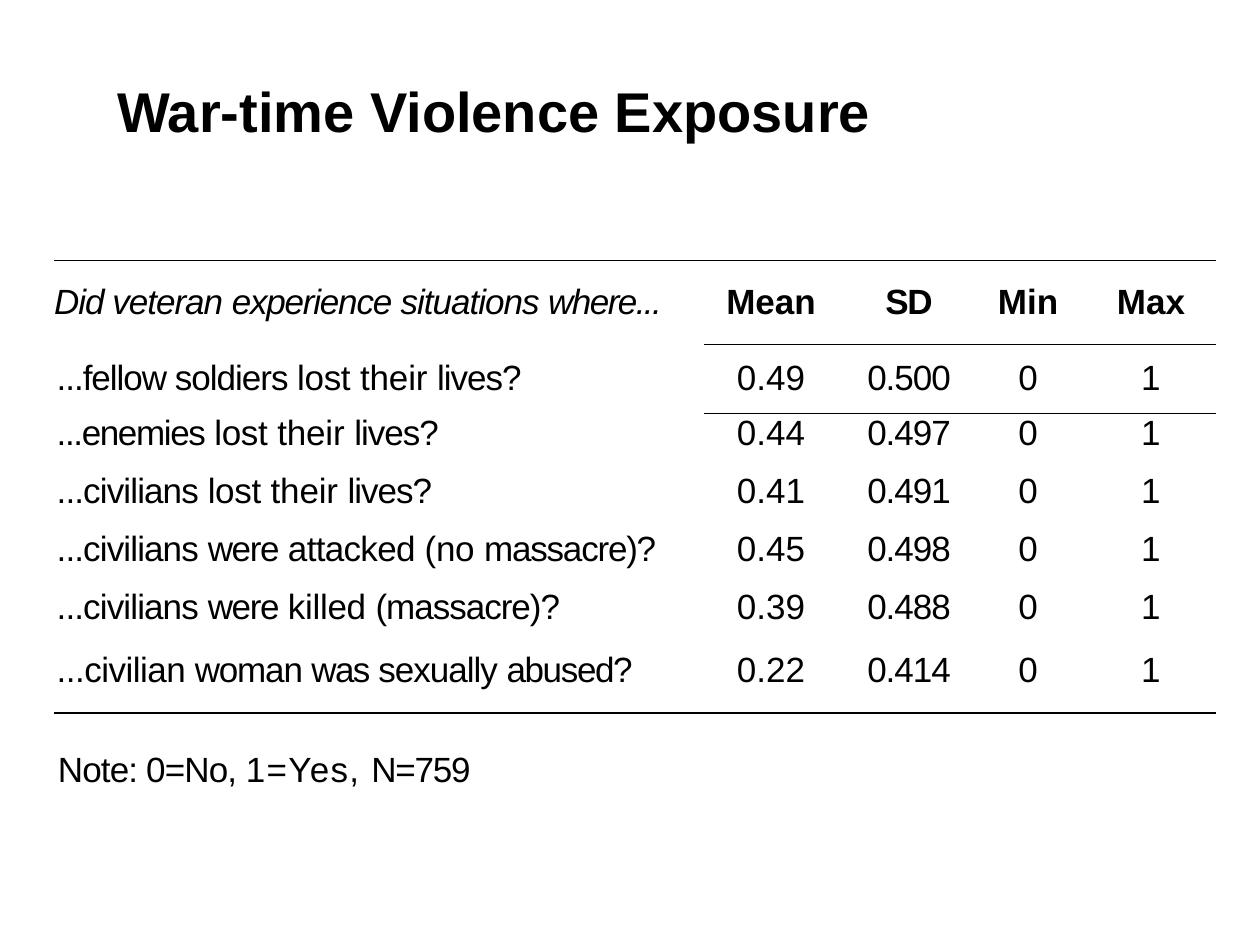
"""Build the slide with the table of war-time violence exposure."""
from lxml.etree import SubElement
from pptx import Presentation
from pptx.dml.color import RGBColor
from pptx.enum.text import MSO_ANCHOR as Anchor, PP_ALIGN as Align
from pptx.oxml import parse_xml
from pptx.oxml.ns import nsdecls, qn
from pptx.util import Inches, Pt

BLACK = RGBColor(0, 0, 0)
WHITE = RGBColor(255, 255, 255)
FONT = "Arial"
PLAIN = "{2D5ABB26-0587-4C30-8999-92F81FD0307C}"
TITLE = "War-time Violence Exposure"
HEAD = [("Did veteran ", -0.6), ("experience ", -0.7), ("situations ", -0.6), ("where...", -0.9)]
NAMES = ["Mean", "SD", "Min", "Max"]
LOST = [("lost ", -0.2), ("their ", -0.1), ("lives?", -0.6)]
CIVIL = ("...civilians ", -0.5)
WERE = ("were ", -0.8)
ROWS = [
    ([("...fellow soldiers ", -0.6)] + LOST, "0.49", "0.500"),
    ([("...enemies ", -0.8)] + LOST, "0.44", "0.497"),
    ([CIVIL] + LOST, "0.41", "0.491"),
    ([CIVIL, WERE, ("attacked ", -0.4), ("(no ", -0.2), ("massacre)?", -0.7)], "0.45", "0.498"),
    ([CIVIL, WERE, ("killed ", -0.2), ("(massacre)?", -0.6)], "0.39", "0.488"),
    ([("...civilian ", -0.3), ("woman ", -0.7), ("was ", -1), ("sexually ", -0.6),
      ("abused?", -0.8)], "0.22", "0.414"),
]
NOTE = [("Note: 0=No, ", -0.5), ("1=Yes, ", 0.7), ("N=759", -0.7)]
WIDTHS = [5.16, 1.06, 1.05, 0.92, 1.03]
HEIGHTS = [0.66, 0.55] + [0.46] * 4 + [0.54]
LEFT, TOP = 0.43, 2.07
THIN, THICK = 0.33, 0.87


def write(para, parts, indent=0, bold=False, italic=False):
    para._p.get_or_add_pPr().set("marL", str(Inches(indent)))
    for text, gap in parts:
        run = para.add_run()
        run.text = text
        font = run.font
        font.name, font.size, font.bold, font.italic = FONT, Pt(20), bold, italic
        font.color.rgb = BLACK
        run._r.get_or_add_rPr().set("spc", str(round(gap * 100)))


def rule(cell, side, width):
    line = parse_xml(f'<a:ln{side} {nsdecls("a")} w="{Pt(width)}"><a:solidFill>'
                     f'<a:srgbClr val="{BLACK}"/></a:solidFill></a:ln{side}>')
    cell._tc.get_or_add_tcPr().insert(0, line)


def fill_cell(cell, row, col, parts):
    cell.margin_left = cell.margin_right = cell.margin_top = cell.margin_bottom = 0
    cell.vertical_anchor = Anchor.MIDDLE
    cell.fill.background()
    para = cell.text_frame.paragraphs[0]
    para.alignment = Align.CENTER if col else Align.LEFT
    if row > 1:
        para.line_spacing = Pt(11.8)
    indent = 0.08 if col == 2 else 0.02 if row and not col else 0
    write(para, parts, indent, bold=row == 0 and col > 0, italic=row == 0 and col == 0)
    if row == len(ROWS):
        rule(cell, "B", THICK)
    elif row < 2 and col:
        rule(cell, "B", THIN)
    if row == 0:
        rule(cell, "T", THICK)


def add_grid(slide):
    grid = [[HEAD] + [[(name, -0.7 if name == "SD" else 0)] for name in NAMES]]
    grid += [[label, [(mean, 0)], [(dev, -0.6)], [("0", 0)], [("1", 0)]]
             for label, mean, dev in ROWS]
    table = slide.shapes.add_table(len(grid), len(WIDTHS), Inches(LEFT), Inches(TOP),
                                   Inches(sum(WIDTHS)), Inches(sum(HEIGHTS))).table
    table.first_row = table.horz_banding = False
    table._tbl.tblPr.find(qn("a:tableStyleId")).text = PLAIN
    for column, width in zip(table.columns, WIDTHS):
        column.width = Inches(width)
    for line, height in zip(table.rows, HEIGHTS):
        line.height = Inches(height)
    for row, line in enumerate(grid):
        for col, parts in enumerate(line):
            fill_cell(table.cell(row, col), row, col, parts)


def add_title(slide):
    title = slide.shapes.title
    title.left, title.top, title.width, title.height = map(Inches, (0.83, 0.52, 8.58, 0.71))
    frame = title.text_frame
    frame.text = TITLE
    frame.vertical_anchor = Anchor.MIDDLE
    para = frame.paragraphs[0]
    para.alignment = Align.LEFT
    font = para.runs[0].font
    font.name, font.size, font.bold = FONT, Pt(32), True
    font.color.rgb = BLACK


def add_note(slide):
    box = slide.shapes.add_textbox(*map(Inches, (LEFT, 5.93, 5.12, 0.34)))
    frame = box.text_frame
    frame.word_wrap = True
    frame.margin_left = frame.margin_right = frame.margin_top = frame.margin_bottom = 0
    write(frame.paragraphs[0], NOTE, indent=0.03)


def main():
    deck = Presentation()
    deck.slide_width, deck.slide_height = Inches(10), Inches(7.5)
    slide = deck.slides.add_slide(deck.slide_layouts[5])
    slide.background.fill.solid()
    slide.background.fill.fore_color.rgb = WHITE
    add_title(slide)
    add_grid(slide)
    add_note(slide)
    deck.save("out.pptx")


if __name__ == "__main__":
    main()
